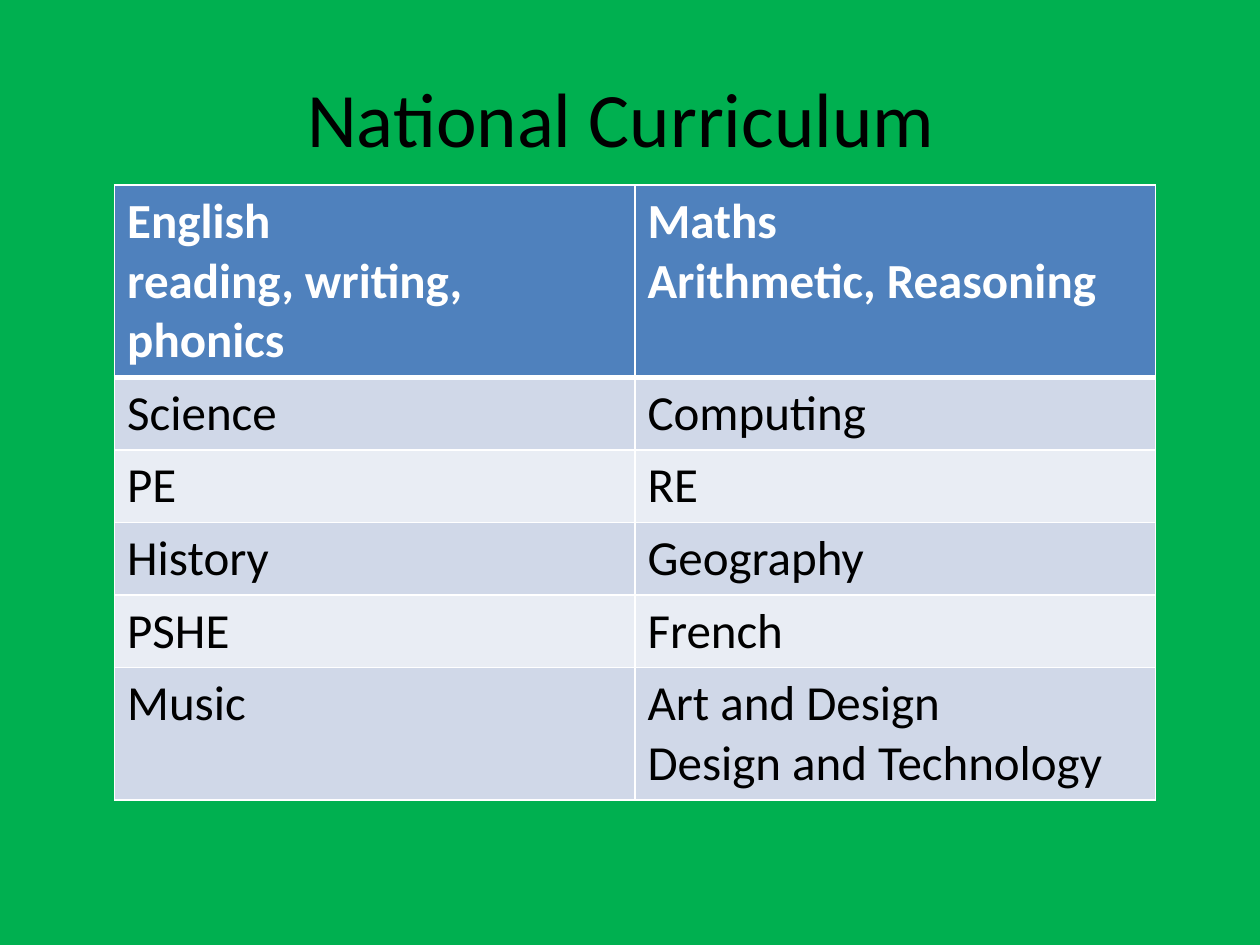
from lxml.etree import SubElement as Sub
from pptx import Presentation
from pptx.dml.color import RGBColor as RGB
from pptx.enum.text import MSO_ANCHOR as Anchor, PP_ALIGN as Align
from pptx.oxml.ns import qn
from pptx.util import Inches, Pt

HUES = {"back": "00B050", "head": "4F81BD", "odd": "D0D8E8",
        "even": "E9EDF4", "ink": "000000", "white": "FFFFFF"}
ROWS = [
    ("English\nreading, writing, phonics", "Maths\nArithmetic, Reasoning"),
    ("Science", "Computing"),
    ("PE", "RE"),
    ("History", "Geography"),
    ("PSHE", "French"),
    ("Music", "Art and Design\nDesign and Technology"),
]
HIGH = [1.42] + [0.57] * (len(ROWS) - 1)
COL = 4.13


def style(frame, hue, **form):
    for para in frame.paragraphs:
        for run in para.runs:
            run.font.color.rgb = RGB.from_string(HUES[hue])
            for key, val in form.items():
                setattr(run.font, key, val)


def edge(cell, side, width):
    line = Sub(cell._tc.get_or_add_tcPr(), qn(f"a:ln{side}"), w=str(Pt(width)))
    Sub(Sub(line, qn("a:solidFill")), qn("a:srgbClr"), val=HUES["white"])


deck = Presentation()
deck.slide_width, deck.slide_height = Inches(10), Inches(7.5)
wide, tall = deck.slide_width, deck.slide_height
slide = deck.slides.add_slide(deck.slide_layouts[5])
slide.background.fill.solid()
slide.background.fill.fore_color.rgb = RGB.from_string(HUES["back"])

title = slide.shapes.title
place = {"left": 0.05 * wide, "top": 0.04 * tall,
         "width": 0.9 * wide, "height": tall / 6}
for key, val in place.items():
    setattr(title, key, int(val))
frame = title.text_frame
frame.text = "National Curriculum "
frame.vertical_anchor = Anchor.MIDDLE
frame.paragraphs[0].alignment = Align.CENTER
style(frame, "ink", name="Calibri", size=Pt(44))

table = slide.shapes.add_table(
    len(ROWS), 2, Inches(0.91), Inches(1.47),
    Inches(2 * COL), Inches(sum(HIGH))).table
for col in table.columns:
    col.width = Inches(COL)
for r, texts in enumerate(ROWS):
    table.rows[r].height = Inches(HIGH[r])
    band = "head" if r == 0 else "odd" if r % 2 else "even"
    for c, text in enumerate(texts):
        cell = table.cell(r, c)
        cell.text = text
        style(cell.text_frame, "ink" if r else "white",
              name="Calibri", size=Pt(28), bold=r == 0)
        sides = {"L": 1, "R": 1, "T": 3 if r == 1 else 1, "B": 1 if r else 3}
        for side, width in sides.items():
            edge(cell, side, width)
        cell.fill.solid()
        cell.fill.fore_color.rgb = RGB.from_string(HUES[band])

deck.save("out.pptx")
